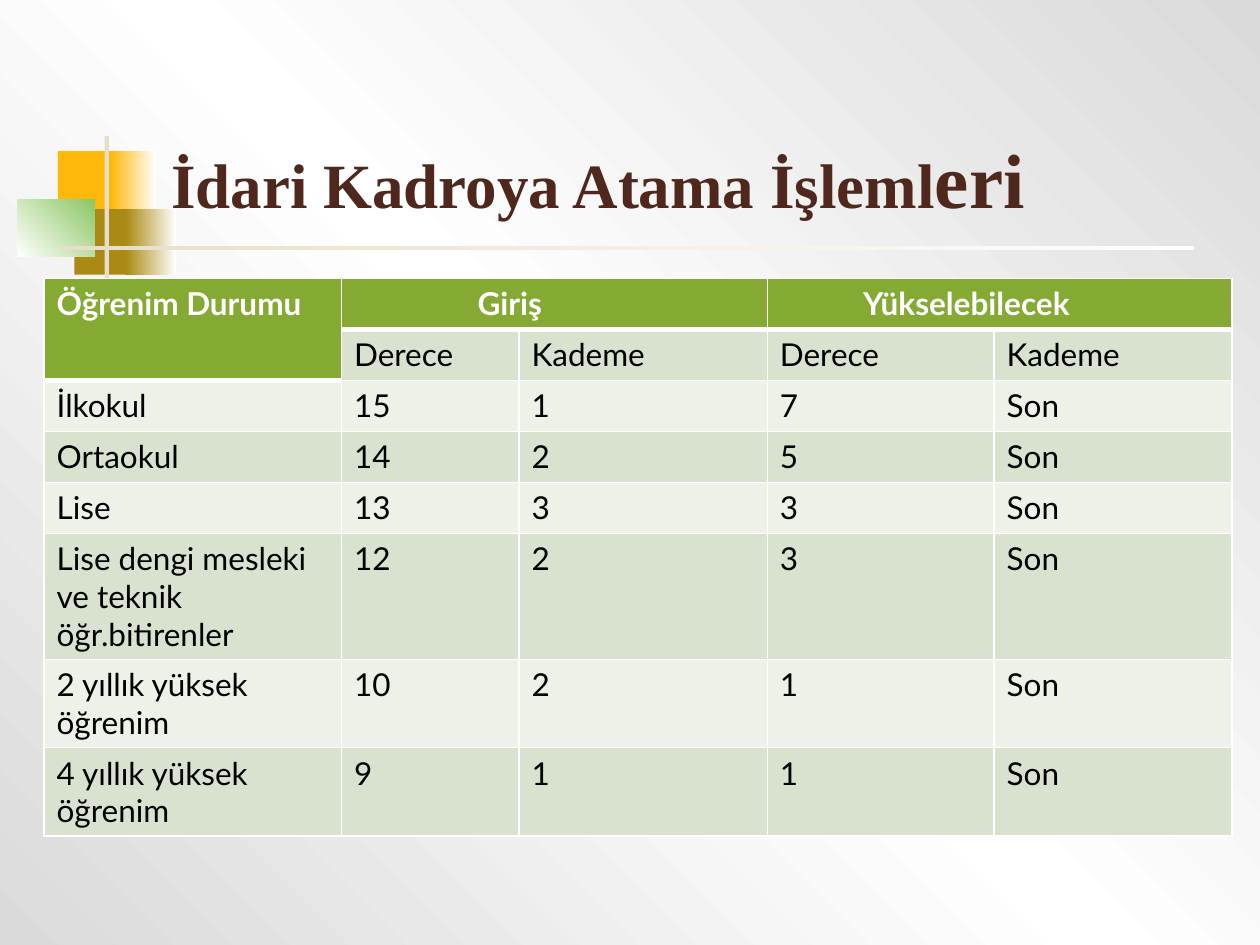
from copy import deepcopy

from lxml import etree
from pptx import Presentation
from pptx import util as u
from pptx.dml.color import RGBColor
from pptx.enum import shapes, text
from pptx.oxml.ns import qn

WHITE = RGBColor(0xFF, 0xFF, 0xFF)
BLACK = RGBColor(0x00, 0x00, 0x00)
SILVER = RGBColor(0xDA, 0xDA, 0xDA)
BROWN = RGBColor(0x4F, 0x27, 0x1C)
AMBER = RGBColor(0xFE, 0xB8, 0x0A)
OLIVE = RGBColor(0xAA, 0x8A, 0x14)
LEAF = RGBColor(0x8D, 0xC7, 0x65)
SAND = RGBColor(0xE7, 0xDE, 0xC9)
GREEN = RGBColor(0x84, 0xAA, 0x33)
BANDS = RGBColor(0xED, 0xF1, 0xE8), RGBColor(0xD9, 0xE2, 0xCE)

COLS, ROWS = 100, 75
WIDTHS = [23.6, 14.1, 19.7, 18, 18.9]
ROW_HEIGHT = 4.05
DATA = [
    ["Öğrenim Durumu", "Giriş", "", "Yükselebilecek", ""],
    ["", "Derece", "Kademe", "Derece", "Kademe"],
    ["İlkokul", "15", "1", "7", "Son"],
    ["Ortaokul", "14", "2", "5", "Son"],
    ["Lise", "13", "3", "3", "Son"],
    ["Lise dengi mesleki ve teknik öğr.bitirenler", "12", "2", "3", "Son"],
    ["2 yıllık yüksek öğrenim", "10", "2", "1", "Son"],
    ["4 yıllık yüksek öğrenim", "9", "1", "1", "Son"],
]
MERGES = [((0, 0), (1, 0)), ((0, 1), (0, 2)), ((0, 3), (0, 4))]
INDENTS = {(0, 1): 10.8, (0, 3): 7.6}


def add_text(p, content, font="Lato", size=18, color=BLACK, bold=False):
    r = p.add_run()
    r.text = content
    r.font.name = font
    r.font.size = u.Pt(size)
    r.font.color.rgb = color
    r.font.bold = bold


def add_gradient(fill, root, colors, angle):
    fill.gradient()
    fill.gradient_angle = angle
    stops = root.xpath(".//a:gsLst")[0]
    while len(stops) < len(colors):
        stops.append(deepcopy(stops[-1]))
    for i, (stop, color) in enumerate(zip(fill.gradient_stops, colors)):
        stop.position = i / (len(colors) - 1)
        stop.color.rgb = color


def add_border(cell, side, points):
    ln = etree.SubElement(cell._tc.get_or_add_tcPr(), qn(f"a:ln{side}"), w=str(u.Pt(points)))
    solid = etree.SubElement(ln, qn("a:solidFill"))
    etree.SubElement(solid, qn("a:srgbClr"), val=str(WHITE))


class Deck:
    def __init__(self):
        self.prs = Presentation()
        self.prs.slide_width, self.prs.slide_height = u.Inches(10), u.Inches(7.5)
        self.s = self.prs.slides.add_slide(self.prs.slide_layouts[5])

    def x(self, cols):
        return round(self.prs.slide_width * cols / COLS)

    def y(self, rows):
        return round(self.prs.slide_height * rows / ROWS)

    def box(self, left, top, width, height):
        return self.x(left), self.y(top), self.x(width), self.y(height)

    def background(self, colors, angle):
        add_gradient(self.s.background.fill, self.s.element, colors, angle)

    def bar(self, area, *colors, angle=0):
        sp = self.s.shapes.add_shape(shapes.MSO_SHAPE.RECTANGLE, *self.box(*area))
        sp.shadow.inherit = False
        sp.line.fill.background()
        if len(colors) > 1:
            add_gradient(sp.fill, sp.element, colors, angle)
        else:
            sp.fill.solid()
            sp.fill.fore_color.rgb = colors[0]

    def title(self, area, runs):
        sp = self.s.shapes.title
        sp.left, sp.top, sp.width, sp.height = self.box(*area)
        sp.element.getparent().append(sp.element)
        tf = sp.text_frame
        tf.word_wrap = True
        tf.auto_size = text.MSO_AUTO_SIZE.NONE
        tf.vertical_anchor = text.MSO_ANCHOR.BOTTOM
        p = tf.paragraphs[0]
        p.alignment = text.PP_ALIGN.LEFT
        for content, size in runs:
            add_text(p, content, font="Times New Roman", size=size, color=BROWN, bold=True)

    def table(self, left, top):
        area = self.box(left, top, sum(WIDTHS), ROW_HEIGHT * len(DATA))
        tbl = self.s.shapes.add_table(len(DATA), len(WIDTHS), *area).table
        for col, width in zip(tbl.columns, WIDTHS):
            col.width = self.x(width)
        for row in tbl.rows:
            row.height = self.y(ROW_HEIGHT)
        for first, last in MERGES:
            tbl.cell(*first).merge(tbl.cell(*last))
        for i, values in enumerate(DATA):
            for j, value in enumerate(values):
                self.cell(tbl.cell(i, j), i, j, value)

    def cell(self, cell, i, j, value):
        last_header = 1 if j == 0 else 0
        header = i <= last_header
        if (i, j) in INDENTS:
            cell.margin_left = self.x(INDENTS[i, j])
        add_border(cell, "L", 1)
        add_border(cell, "R", 1)
        add_border(cell, "T", 3 if i == last_header + 1 else 1)
        add_border(cell, "B", 3 if header else 1)
        cell.fill.solid()
        cell.fill.fore_color.rgb = GREEN if header else BANDS[i % 2]
        if value:
            add_text(cell.text_frame.paragraphs[0], value,
                     color=WHITE if header else BLACK, bold=header)


def main():
    deck = Deck()
    deck.background([SILVER, WHITE, SILVER], 45)
    deck.bar((4.6, 12, 4.8, 5.2), AMBER)
    deck.bar((8.8, 12, 3.6, 5.2), AMBER, WHITE)
    deck.bar((5.9, 16.6, 4.6, 5.2), OLIVE)
    deck.bar((10, 16.6, 4, 5.2), OLIVE, WHITE)
    deck.bar((1.4, 15.8, 6.1, 4.6), WHITE, LEAF, angle=45)
    deck.bar((8.3, 10.8, 0.35, 11.5), SAND)
    deck.bar((4.8, 19.5, 90, 0.35), SAND, WHITE)
    deck.title((12.6, 2.3, 85.2, 16), [("İdari Kadroya Atama İşleml", 36), ("eri", 44)])
    deck.table(3.5, 22.1)
    deck.prs.save("out.pptx")


if __name__ == "__main__":
    main()
